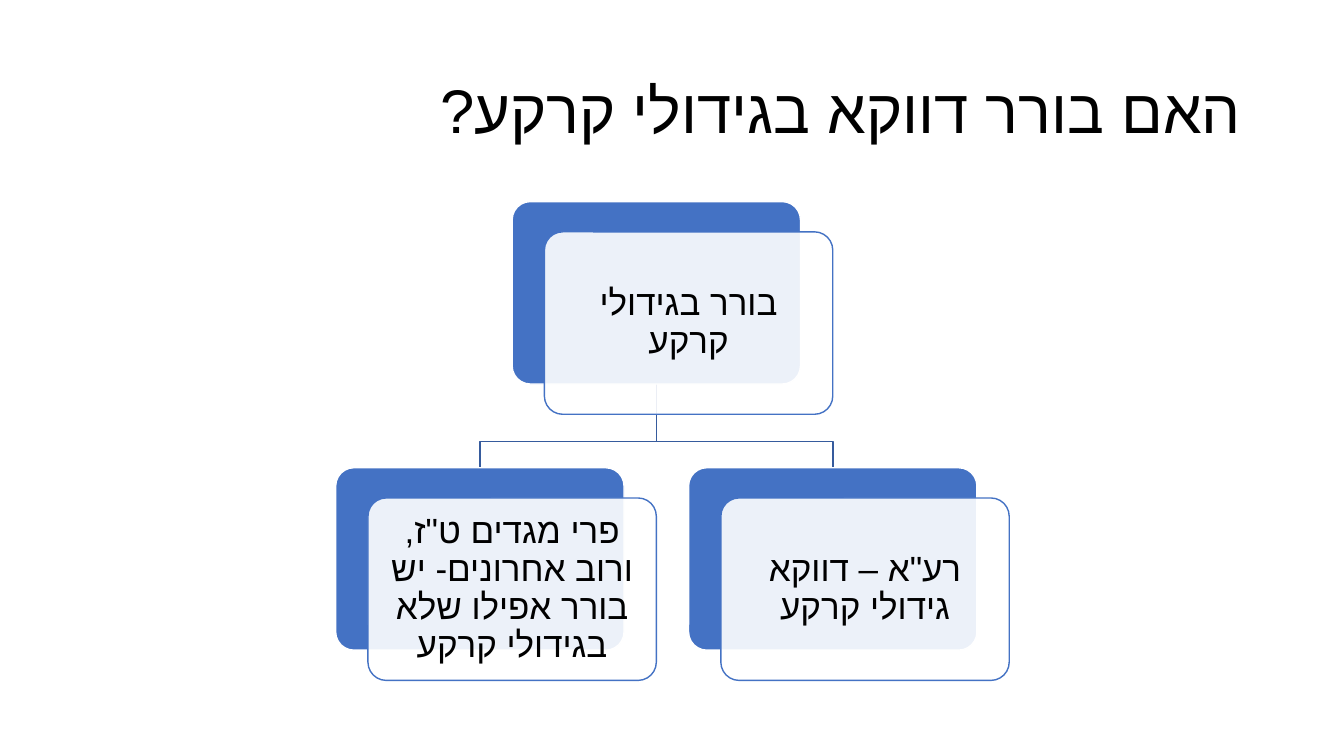
import pptx
import pptx.dml.color
import pptx.enum.shapes
import pptx.enum.text
import pptx.util
from lxml import etree
from pptx.oxml.ns import qn

INCH = pptx.util.Inches
CARD_W, CARD_H = 2.86, 1.81
TREE_LEFT, TREE_TOP = 3.33, 2.0
COLUMN, ROW = 1.75, 2.64
OFFSET_X, OFFSET_Y = 0.32, 0.3
BLUE, WHITE, BLACK, BRANCH = "4472C4", "FFFFFF", "000000", "365B9D"


def color(hex_value):
    """Turn a hex string into a colour."""
    return pptx.dml.color.RGBColor.from_string(hex_value)


def write_hebrew(frame, words, size, alignment):
    """Write one right-to-left paragraph, centred vertically."""
    frame.word_wrap = True
    frame.vertical_anchor = pptx.enum.text.MSO_ANCHOR.MIDDLE
    paragraph = frame.paragraphs[0]
    paragraph.alignment = alignment
    paragraph.line_spacing = 0.9
    paragraph._p.get_or_add_pPr().set("rtl", "1")
    run = paragraph.add_run()
    run.text = words
    run.font.size = pptx.util.Pt(size)
    run.font.name = "Calibri"
    run.font.color.rgb = color(BLACK)
    etree.SubElement(run._r.get_or_add_rPr(), qn("a:cs"), typeface="Arial")


def add_title(slide, words):
    """Add the question at the top of the slide."""
    title = slide.shapes.add_textbox(INCH(0.92), INCH(0.4), INCH(11.5), INCH(1.45))
    write_hebrew(title.text_frame, words, 44, pptx.enum.text.PP_ALIGN.RIGHT)


def add_panel(slide, left, top, fill, outline):
    """Add one rounded panel of a card."""
    panel = slide.shapes.add_shape(
        pptx.enum.shapes.MSO_SHAPE.ROUNDED_RECTANGLE,
        INCH(left), INCH(top), INCH(CARD_W), INCH(CARD_H))
    panel.adjustments[0] = 0.1
    panel.shadow.inherit = False
    panel.fill.solid()
    panel.fill.fore_color.rgb = color(fill)
    panel.line.color.rgb = color(outline)
    panel.line.width = pptx.util.Pt(1)
    return panel


def add_card(slide, column, row, words):
    """Add a blue panel with a translucent text panel over it."""
    left, top = TREE_LEFT + column * COLUMN, TREE_TOP + row * ROW
    add_panel(slide, left, top, BLUE, WHITE)
    front = add_panel(slide, left + OFFSET_X, top + OFFSET_Y, WHITE, BLUE)
    tint = front.fill._xPr.find(qn("a:solidFill"))[0]
    etree.SubElement(tint, qn("a:alpha"), val="90000")
    frame = front.text_frame
    frame.margin_left = frame.margin_right = INCH(0.1)
    frame.margin_top = frame.margin_bottom = INCH(0.1)
    write_hebrew(frame, words, 25, pptx.enum.text.PP_ALIGN.CENTER)


def add_branch(slide, parent_column, child_column):
    """Draw the bent line from the parent card down to a child card."""
    start_x, end_x = (INCH(TREE_LEFT + column * COLUMN + CARD_W / 2)
                      for column in (parent_column, child_column))
    start_y, end_y = INCH(TREE_TOP + CARD_H), INCH(TREE_TOP + ROW)
    bend_y = INCH(TREE_TOP + ROW - 0.26)
    outline = slide.shapes.build_freeform(start_x, start_y)
    outline.add_line_segments(
        [(start_x, bend_y), (end_x, bend_y), (end_x, end_y)], close=False)
    branch = outline.convert_to_shape()
    branch.shadow.inherit = False
    branch.fill.background()
    branch.line.color.rgb = color(BRANCH)
    branch.line.width = pptx.util.Pt(1)


def main():
    """Build the slide and save it."""
    deck = pptx.Presentation()
    deck.slide_width, deck.slide_height = INCH(13.33), INCH(7.5)
    slide = deck.slides.add_slide(deck.slide_layouts[6])
    add_title(slide, "האם בורר דווקא בגידולי קרקע?")
    opinions = [
        (2, "רע\"א – דווקא גידולי קרקע"),
        (0, "פרי מגדים ט\"ז, ורוב אחרונים- יש בורר אפילו שלא בגידולי קרקע"),
    ]
    for column, _ in reversed(opinions):
        add_branch(slide, 1, column)
    add_card(slide, 1, 0, "בורר בגידולי קרקע")
    for column, words in opinions:
        add_card(slide, column, 1, words)
    deck.save("out.pptx")


if __name__ == "__main__":
    main()
